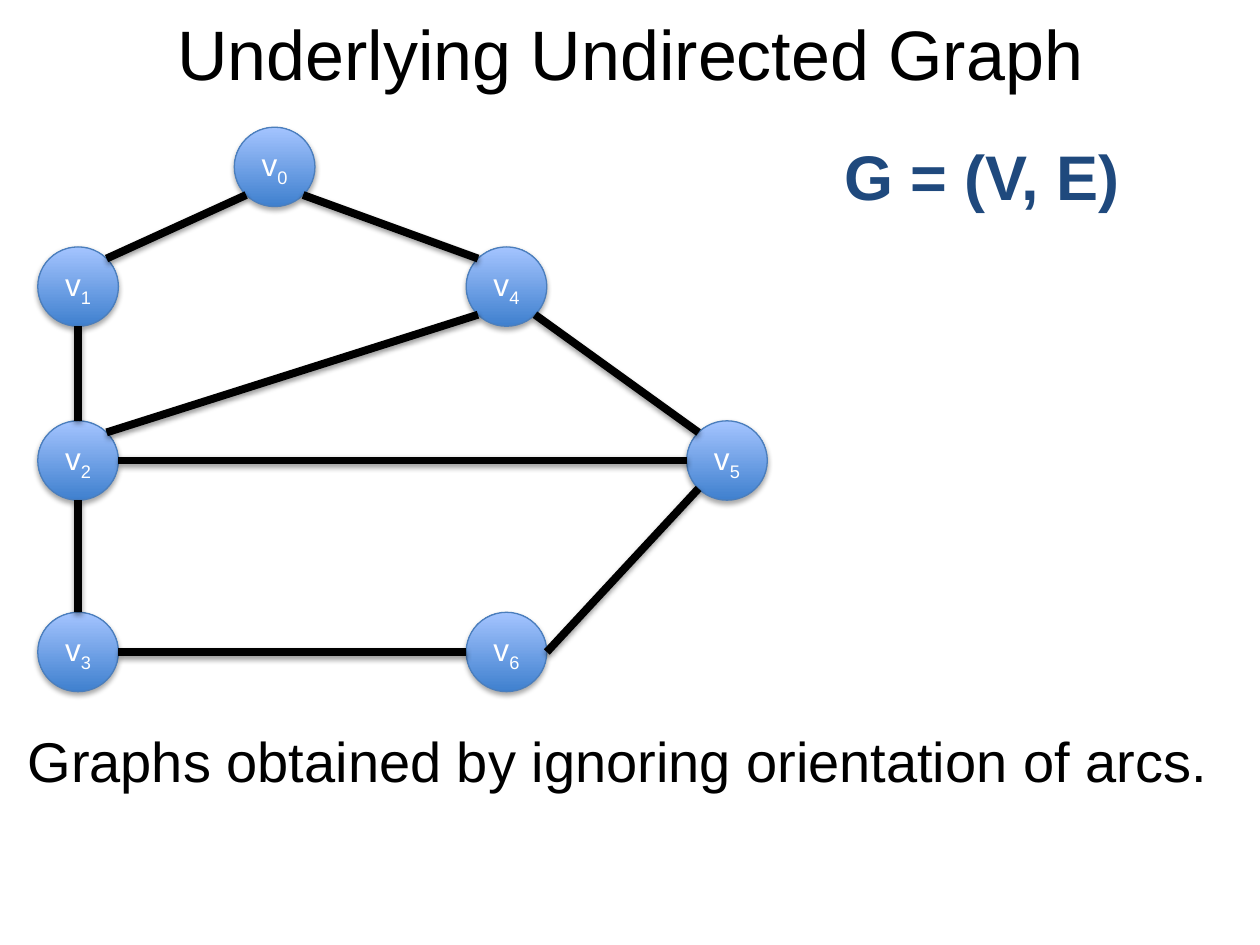
import math
from lxml import etree
from pptx import Presentation
from pptx import util as u
from pptx.dml.color import RGBColor
from pptx.enum import shapes, text
from pptx.oxml import ns

FONT = "Arial"
COLORS = {
    "ink": "000000",
    "formula": "1F497D",
    "node_bottom": "3F80CE",
    "node_top": "A4C4FF",
    "node_line": "4B7EBC",
    "node_text": "FFFFFF",
}
NODE_W, NODE_H = 0.64, 0.63
VERTICES = {
    "0": (1.56, 0),
    "1": (0, 0.95),
    "2": (0, 2.33),
    "3": (0, 3.85),
    "4": (3.4, 0.95),
    "5": (5.15, 2.33),
    "6": (3.4, 3.85),
}
SITE_ANGLES = {"e": 0, "se": 45, "s": 90, "sw": 135, "w": 180, "nw": 225, "n": 270, "ne": 315}
EDGES = [
    ("1", "ne", "0", "sw"),
    ("1", "s", "2", "n"),
    ("2", "s", "3", "n"),
    ("0", "se", "4", "nw"),
    ("2", "ne", "4", "sw"),
    ("3", "e", "6", "w"),
    ("4", "se", "5", "nw"),
    ("6", "e", "5", "sw"),
    ("2", "e", "5", "w"),
]


def color(key):
    return RGBColor.from_string(COLORS[key])


def add_run(paragraph, wording, size, key, bold=False):
    run = paragraph.add_run()
    run.text = wording
    run.font.name = FONT
    run.font.size = u.Pt(size)
    run.font.bold = bold
    run.font.color.rgb = color(key)
    return run


def add_shadow(part, opacity, distance):
    effects = etree.SubElement(part._element.spPr, ns.qn("a:effectLst"))
    shadow = etree.SubElement(
        effects, ns.qn("a:outerShdw"), blurRad=str(u.Pt(3.1)),
        dist=str(u.Pt(distance)), dir="5400000", rotWithShape="0")
    ink = etree.SubElement(shadow, ns.qn("a:srgbClr"), val=COLORS["ink"])
    etree.SubElement(ink, ns.qn("a:alpha"), val=str(opacity * 1000))


def place_title(slide, left, top, width, height):
    title = slide.shapes.title
    title.left, title.top = u.Inches(left), u.Inches(top)
    title.width, title.height = u.Inches(width), u.Inches(height)
    title.text_frame.vertical_anchor = text.MSO_ANCHOR.MIDDLE
    heading = title.text_frame.paragraphs[0]
    heading.alignment = text.PP_ALIGN.CENTER
    add_run(heading, "Underlying Undirected Graph", 40, "ink")


def add_label(slide, left, top, width, height, wording, size, key, bold=False):
    label = slide.shapes.add_textbox(
        u.Inches(left), u.Inches(top), u.Inches(width), u.Inches(height))
    label.text_frame.word_wrap = False
    label.text_frame.auto_size = text.MSO_AUTO_SIZE.SHAPE_TO_FIT_TEXT
    add_run(label.text_frame.paragraphs[0], wording, size, key, bold)


def add_vertex(slide, left, top, index):
    vertex = slide.shapes.add_shape(
        shapes.MSO_SHAPE.OVAL, u.Inches(left), u.Inches(top),
        u.Inches(NODE_W), u.Inches(NODE_H))
    vertex.fill.gradient()
    vertex.fill.gradient_angle = 90
    for stop, key in zip(vertex.fill.gradient_stops, ("node_bottom", "node_top")):
        stop.color.rgb = color(key)
    vertex.line.color.rgb = color("node_line")
    vertex.line.width = u.Pt(0.75)
    add_shadow(vertex, 35, 1.8)
    frame = vertex.text_frame
    frame.margin_left = frame.margin_right = 0
    frame.vertical_anchor = text.MSO_ANCHOR.MIDDLE
    name = frame.paragraphs[0]
    name.alignment = text.PP_ALIGN.CENTER
    add_run(name, "v", 18, "node_text")
    subscript = add_run(name, index, 18, "node_text")
    subscript.font._element.set("baseline", "-25000")


def site_point(left, top, index, site):
    x, y = VERTICES[index]
    angle = math.radians(SITE_ANGLES[site])
    return (u.Inches(left + x + NODE_W / 2 * (1 + math.cos(angle))),
            u.Inches(top + y + NODE_H / 2 * (1 + math.sin(angle))))


def draw_graph(slide, left, top):
    for index, (x, y) in VERTICES.items():
        add_vertex(slide, left + x, top + y, index)
    for start, start_site, end, end_site in EDGES:
        edge = slide.shapes.add_connector(
            shapes.MSO_CONNECTOR.STRAIGHT,
            *site_point(left, top, start, start_site),
            *site_point(left, top, end, end_site))
        edge.line.color.rgb = color("ink")
        edge.line.width = u.Pt(4.5)
        add_shadow(edge, 38, 1.6)


def main():
    deck = Presentation()
    deck.slide_width, deck.slide_height = u.Inches(10), u.Inches(7.5)
    slide = deck.slides.add_slide(deck.slide_layouts[5])
    place_title(slide, 0.5, 0.06, 9, 0.71)
    add_label(slide, 0.12, 5.72, 9.66, 0.64,
              "Graphs obtained by ignoring orientation of arcs.", 32, "ink")
    add_label(slide, 6.6, 1.04, 2.41, 0.71, "G = (V, E)", 36, "formula", bold=True)
    draw_graph(slide, 0.3, 1.01)
    deck.save("out.pptx")


if __name__ == "__main__":
    main()
